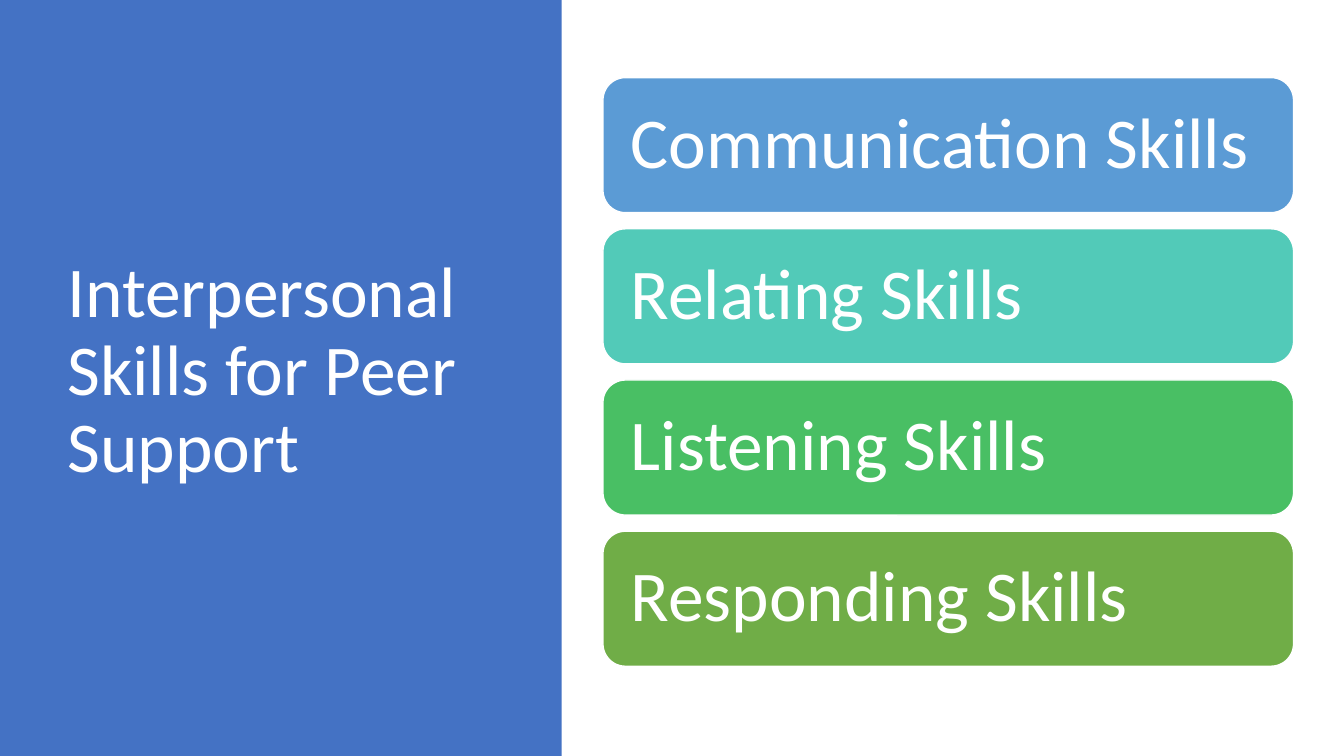
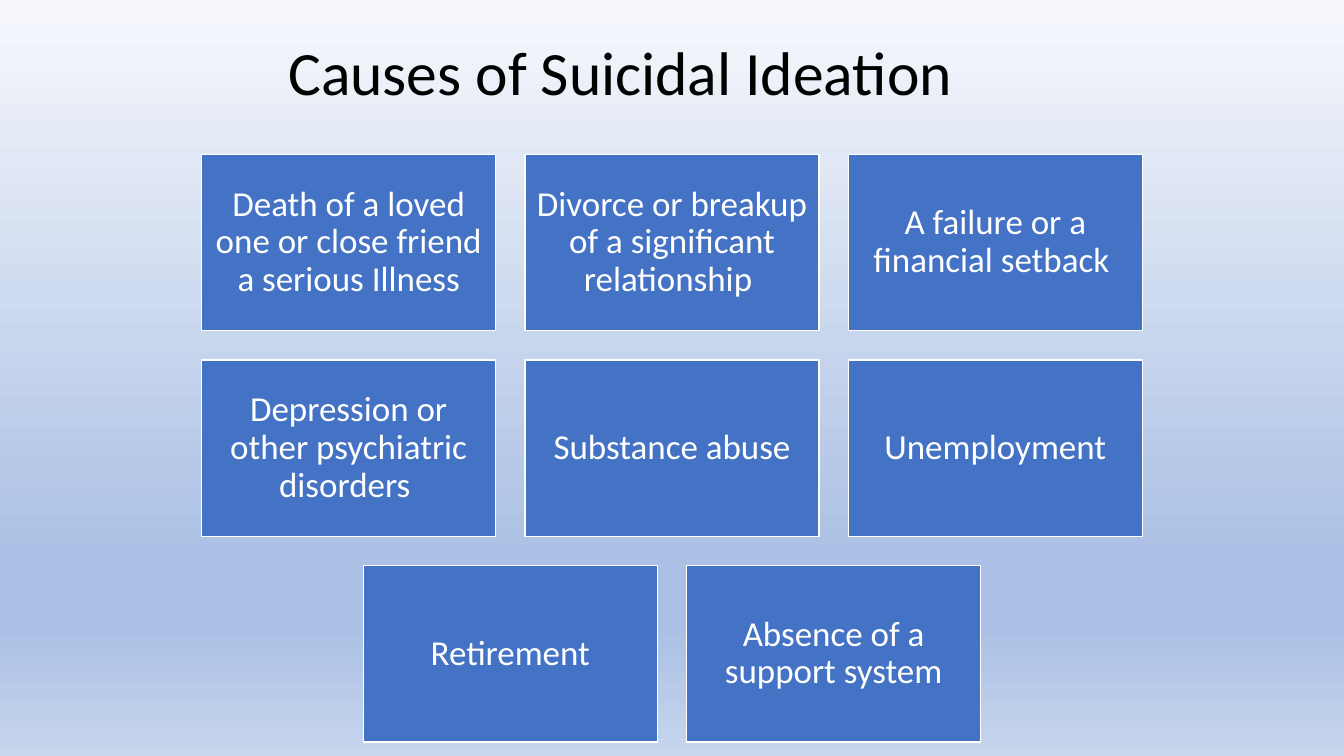
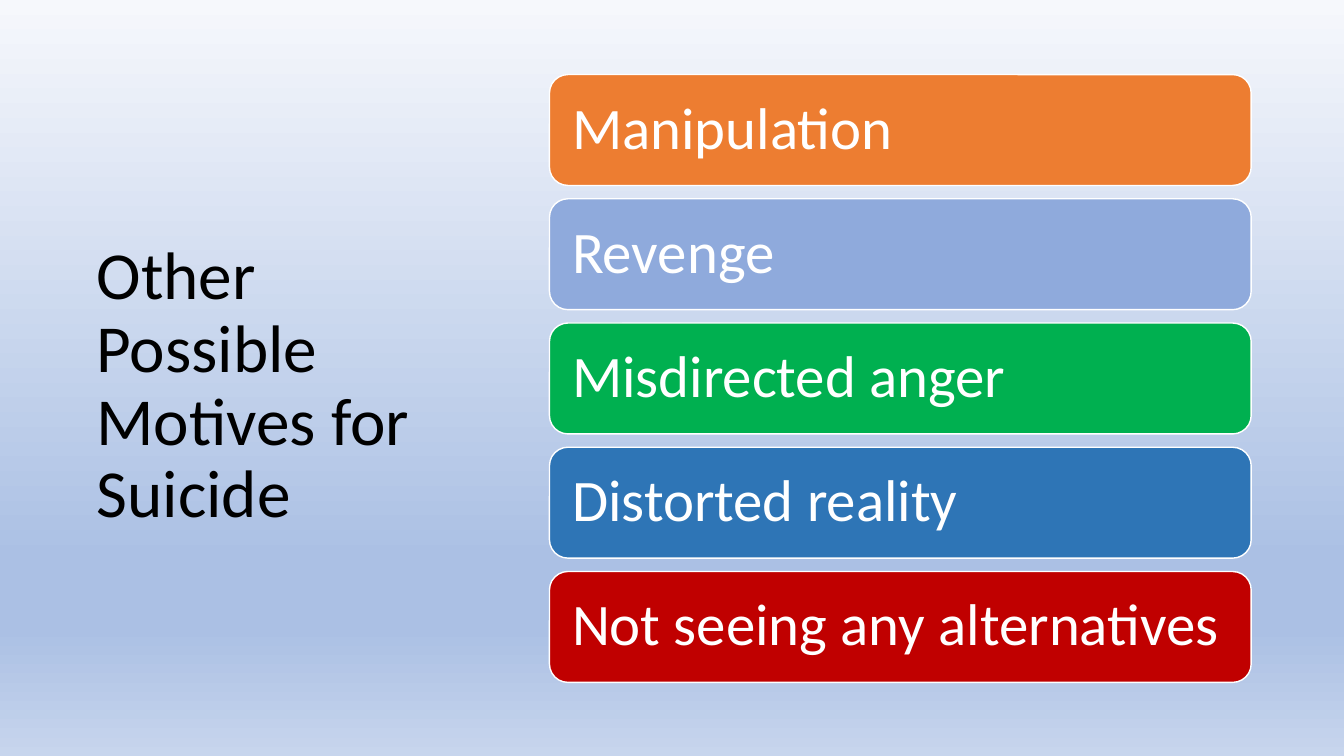
import pptx
import pptx.dml.color
import pptx.enum.shapes
import pptx.enum.text
import pptx.oxml.ns
import pptx.util
from lxml import etree

Inches = pptx.util.Inches
Pt = pptx.util.Pt
RGBColor = pptx.dml.color.RGBColor
Shape = pptx.enum.shapes.MSO_SHAPE
Align = pptx.enum.text.PP_ALIGN
Anchor = pptx.enum.text.MSO_ANCHOR

FONT = "Calibri"
WHITE = RGBColor(0xFF, 0xFF, 0xFF)
BLACK = RGBColor(0x00, 0x00, 0x00)
BLUE = RGBColor(0x44, 0x72, 0xC4)
SKY = RGBColor(0x5B, 0x9B, 0xD5)
TEAL = RGBColor(0x52, 0xCA, 0xB8)
MINT = RGBColor(0x49, 0xBF, 0x64)
OLIVE = RGBColor(0x70, 0xAD, 0x47)
ORANGE = RGBColor(0xED, 0x7D, 0x31)
LILAC = RGBColor(0x8F, 0xAA, 0xDC)
GREEN = RGBColor(0x00, 0xB0, 0x50)
NAVY = RGBColor(0x2E, 0x75, 0xB6)
RED = RGBColor(0xC0, 0x00, 0x00)
PALE = RGBColor(0xF6, 0xF8, 0xFC)
HAZE = RGBColor(0xAB, 0xC0, 0xE4)
MIST = RGBColor(0xC7, 0xD5, 0xED)
FADE = [(0, PALE), (74, HAZE), (83, HAZE), (100, MIST)]

WIDE, HIGH = 13.33, 7.5


def set_text(shape, text, size, color, align=Align.LEFT, pad=(0.1, 0.05)):
    """Write one vertically centred paragraph into a shape."""
    frame = shape.text_frame
    frame.word_wrap = True
    frame.vertical_anchor = Anchor.MIDDLE
    frame.margin_left = frame.margin_right = Inches(pad[0])
    frame.margin_top = frame.margin_bottom = Inches(pad[1])
    para = frame.paragraphs[0]
    para.text = text
    para.alignment = align
    para.line_spacing = 0.9
    para.font.name = FONT
    para.font.size = Pt(size)
    para.font.color.rgb = color


def add_box(slide, kind, box, fill, edge=None):
    shape = slide.shapes.add_shape(kind, *map(Inches, box))
    shape.shadow.inherit = False
    shape.fill.solid()
    shape.fill.fore_color.rgb = fill
    if edge is None:
        shape.line.fill.background()
    else:
        shape.line.color.rgb = edge
        shape.line.width = Pt(1)
    return shape


def add_title(slide, box, text, size, color=BLACK):
    title = slide.shapes.add_textbox(*map(Inches, box))
    set_text(title, text, size, color)


def add_fade(slide):
    """Fill the background with the shared vertical gradient."""
    fill = slide.background.fill
    fill.gradient()
    fill.gradient_angle = 270
    qn = pptx.oxml.ns.qn
    stops = next(slide.element.iter(qn("a:gsLst")))
    for stop in list(stops):
        stops.remove(stop)
    for part, color in FADE:
        stop = etree.SubElement(stops, qn("a:gs"), pos=str(part * 1000))
        etree.SubElement(stop, qn("a:srgbClr"), val=str(color))


def add_bars(slide, box, bars, tall, size, pad):
    """Stack equal rounded bars so that they fill the box."""
    left, top, wide, high = box
    step = (high - tall) / (len(bars) - 1)
    for i, (text, fill) in enumerate(bars):
        place = (left, top + i * step, wide, tall)
        bar = add_box(slide, Shape.ROUNDED_RECTANGLE, place, fill, WHITE)
        set_text(bar, text, size, WHITE, pad=(pad, pad))


def add_grid(slide, box, rows):
    """Lay out rows of cards, each row centred in the box."""
    left, top, wide, high = box
    gap = 0.29
    card_w = (wide - 2 * gap) / 3
    card_h = (high - 2 * gap) / 3
    for r, row in enumerate(rows):
        span = len(row) * (card_w + gap) - gap
        start = left + (wide - span) / 2
        for c, text in enumerate(row):
            place = (start + c * (card_w + gap), top + r * (card_h + gap),
                     card_w, card_h)
            card = add_box(slide, Shape.RECTANGLE, place, BLUE, WHITE)
            set_text(card, text, 25, WHITE, Align.CENTER, (0.1, 0.1))


def skills_slide(slide):
    add_box(slide, Shape.RECTANGLE, (0, 0, 5.57, HIGH), BLUE)
    add_title(slide, (0.57, 0.68, 4.16, 6.02),
              "Interpersonal Skills for Peer Support", 51, WHITE)
    bars = [("Communication Skills", SKY), ("Relating Skills", TEAL),
            ("Listening Skills", MINT), ("Responding Skills", OLIVE)]
    add_bars(slide, (5.98, 0.77, 6.85, 5.84), bars, 1.34, 51, 0.21)


def causes_slide(slide):
    add_fade(slide)
    add_title(slide, (2.76, 0.14, 9.18, 1.21),
              "Causes of Suicidal Ideation", 44)
    rows = [
        ["Death of a loved one or close friend a serious Illness",
         "Divorce or breakup of a significant relationship ",
         "A failure or a financial setback "],
        ["Depression or other psychiatric disorders ",
         "Substance abuse", "Unemployment"],
        ["Retirement", "Absence of a support system"],
    ]
    add_grid(slide, (2, 1.53, 9.33, 5.83), rows)


def motives_slide(slide):
    add_fade(slide)
    add_title(slide, (0.86, 0.92, 3.84, 5.84),
              "Other Possible Motives for Suicide", 48)
    bars = [("Manipulation", ORANGE), ("Revenge", LILAC),
            ("Misdirected anger", GREEN), ("Distorted reality", NAVY),
            ("Not seeing any alternatives", RED)]
    add_bars(slide, (5.45, 0.74, 6.96, 6.03), bars, 1.1, 42, 0.17)


def main():
    deck = pptx.Presentation()
    deck.slide_width = Inches(WIDE)
    deck.slide_height = Inches(HIGH)
    for build in (skills_slide, causes_slide, motives_slide):
        build(deck.slides.add_slide(deck.slide_layouts[6]))
    deck.save("out.pptx")


if __name__ == "__main__":
    main()
